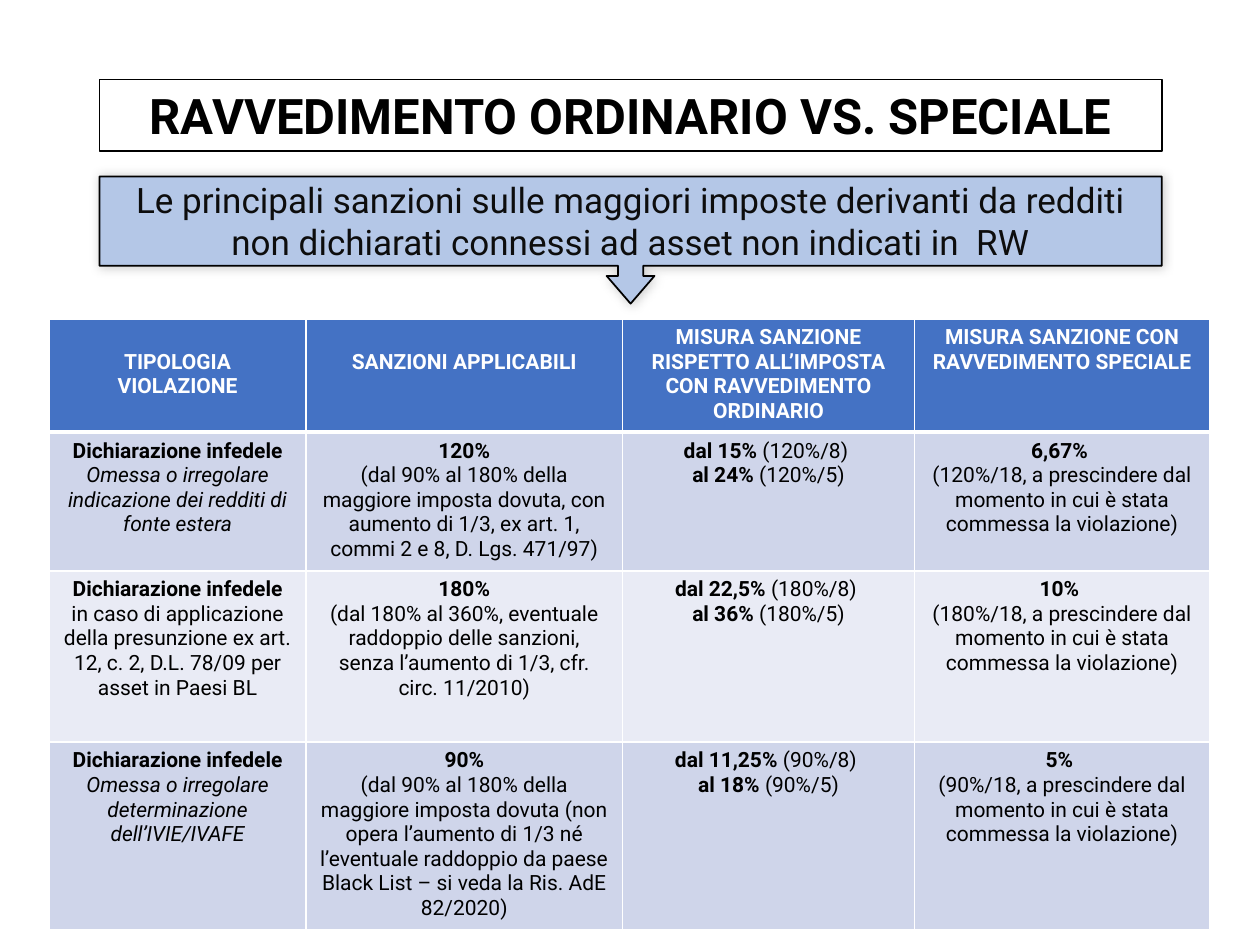
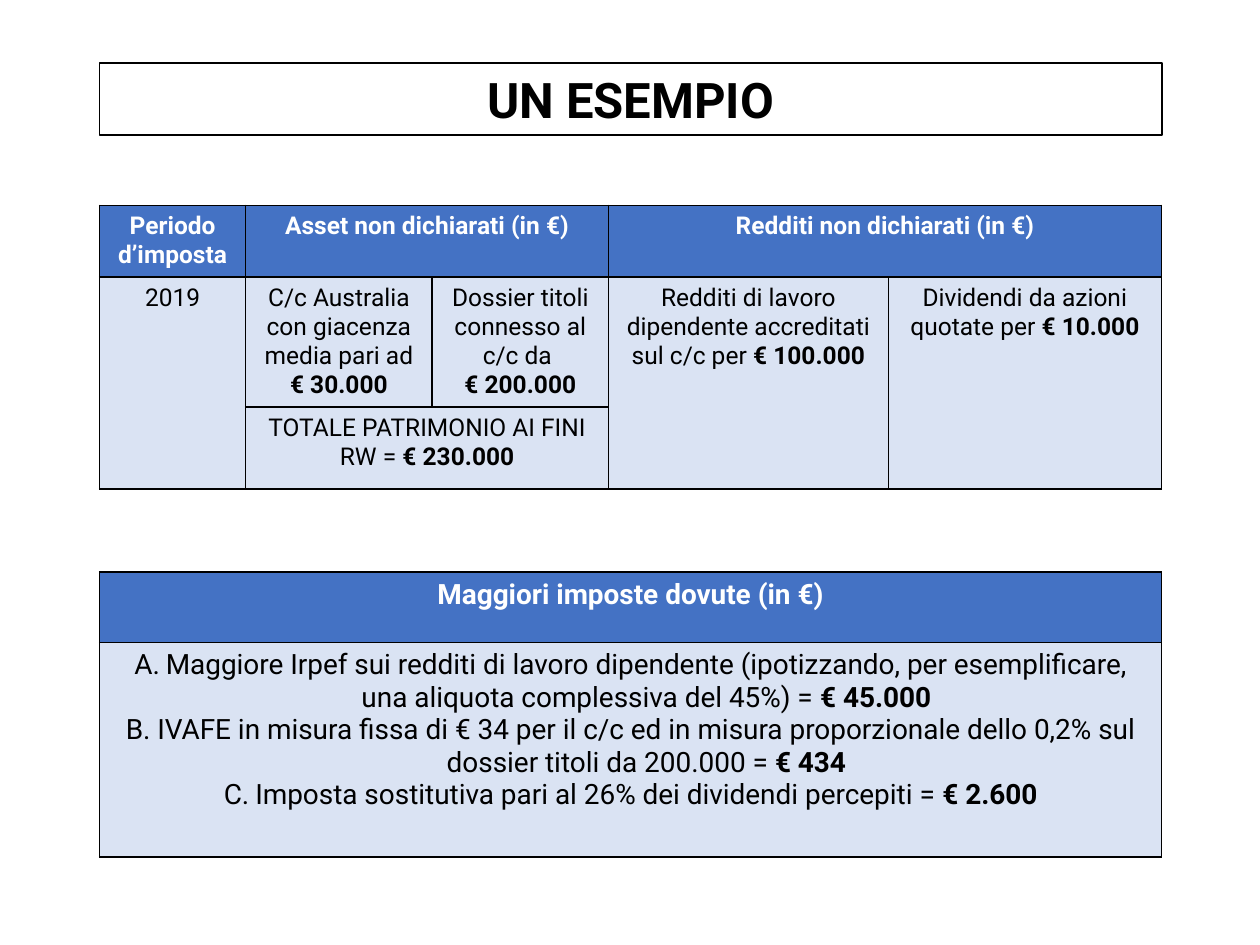
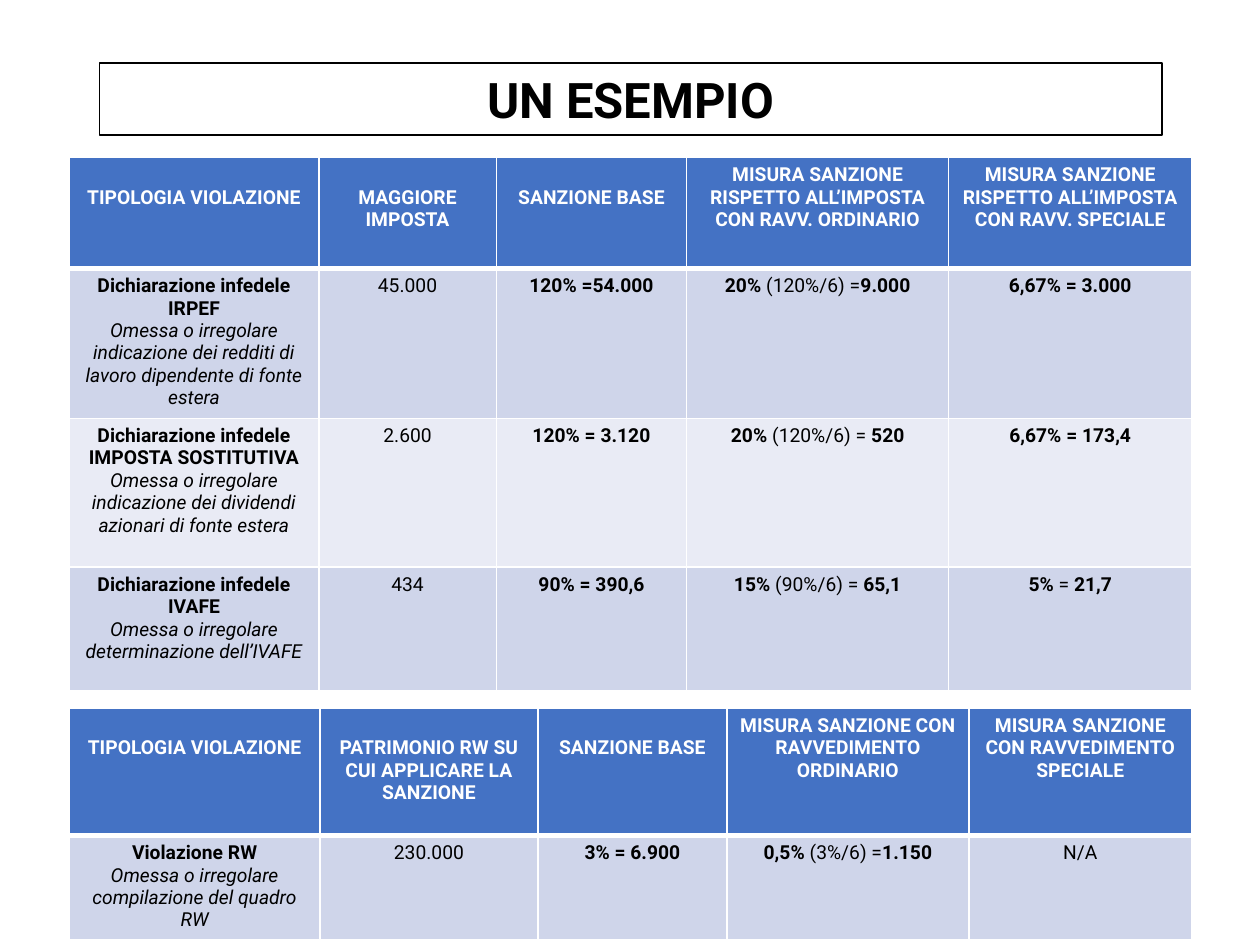
"""Build three slides comparing ordinary and special tax settlement."""
from dataclasses import dataclass

from lxml import etree
from pptx import Presentation
from pptx.dml.color import RGBColor
from pptx.enum.text import MSO_ANCHOR, MSO_AUTO_SIZE, PP_ALIGN
from pptx.oxml.ns import qn
from pptx.util import Inches, Pt

CENTER = PP_ALIGN.CENTER
MIDDLE, TOP = MSO_ANCHOR.MIDDLE, MSO_ANCHOR.TOP
NO_AUTOFIT = MSO_AUTO_SIZE.NONE

FONT = "Roboto"
LINE_HEIGHT = 1.17
TITLE_ONLY = 5
LEFT, WIDTH = 0.79, 8.43
BLACK = RGBColor(0x00, 0x00, 0x00)
WHITE = RGBColor(0xFF, 0xFF, 0xFF)
INK = RGBColor(0x0D, 0x0D, 0x0D)
HEADER_BLUE = RGBColor(0x44, 0x72, 0xC4)
CALLOUT_BLUE = RGBColor(0xB4, 0xC7, 0xE7)
BAND_DARK = RGBColor(0xCF, 0xD5, 0xEA)
BAND_LIGHT = RGBColor(0xE9, 0xEB, 0xF5)
PALE_BLUE = RGBColor(0xDA, 0xE3, 0xF3)


@dataclass(frozen=True)
class Grid:
    """A table: *bold* and _italic markup, one paragraph for each text line."""
    left: float
    top: float
    columns: tuple[float, ...]
    heights: tuple[float, ...]
    size: int
    rows: tuple[tuple[str, ...], ...]
    bands: tuple[RGBColor, ...] = (BAND_DARK, BAND_LIGHT)
    border: RGBColor = WHITE
    header_rule: int = 3
    lowered_headers: int = 0
    merges: tuple[tuple[int, int, int, int], ...] = ()
    lettered: bool = False


SETTLEMENTS = Grid(
    0.39, 2.53, (2.04, 2.51, 2.32, 2.34), (0.9, 1.1, 1.36, 1.49), 12,
    (
        ("*TIPOLOGIA VIOLAZIONE*", "*SANZIONI APPLICABILI*",
         "*MISURA SANZIONE RISPETTO ALL’IMPOSTA CON RAVVEDIMENTO ORDINARIO*",
         "*MISURA SANZIONE CON RAVVEDIMENTO SPECIALE*"),
        ("*Dichiarazione infedele *_Omessa o irregolare indicazione dei redditi di fonte estera",
         "*120%*\n(dal 90% al 180% della maggiore imposta dovuta, con aumento di 1/3, "
         "ex art. 1, commi 2 e 8, D. Lgs. 471/97)",
         "*dal 15% *(120%/8) \n*al 24%* (120%/5)",
         "*6,67% *\n(120%/18, a prescindere dal momento in cui è stata commessa la violazione)"),
        ("*Dichiarazione infedele *in caso di applicazione della presunzione ex art. 12, "
         "c. 2, D.L. 78/09 per asset in Paesi BL",
         "*180%*\n(dal 180% al 360%, eventuale raddoppio delle sanzioni, "
         "senza l’aumento di 1/3, cfr. circ. 11/2010)",
         "*dal 22,5% *(180%/8) \n*al 36%* (180%/5)",
         "*10% *\n(180%/18, a prescindere dal momento in cui è stata commessa la violazione)"),
        ("*Dichiarazione infedele*\n_Omessa o irregolare determinazione dell’IVIE/IVAFE",
         "*90%*\n(dal 90% al 180% della maggiore imposta dovuta (non opera l’aumento di 1/3 né "
         "l’eventuale raddoppio da paese Black List – si veda la Ris. AdE 82/2020)",
         "*dal 11,25% *(90%/8) \n*al 18%* (90%/5)",
         "*5% *\n(90%/18, a prescindere dal momento in cui è stata commessa la violazione)"),
    ),
    lowered_headers=2,
)

UNDECLARED = Grid(
    LEFT, 1.63, (1.16, 1.48, 1.4, 2.22, 2.17), (0.57, 1.03, 0.65), 14,
    (
        ("*Periodo d’imposta*", "*Asset non dichiarati (in €)*", "",
         "*Redditi non dichiarati (in €)*", ""),
        ("2019", "C/c Australia con giacenza media pari ad *€ 30.000*",
         "Dossier titoli connesso al c/c da \n*€ 200.000*",
         "Redditi di lavoro dipendente accreditati sul c/c per *€ 100.000*",
         "Dividendi da azioni quotate per *€ 10.000*"),
        ("", "TOTALE PATRIMONIO AI FINI RW = *€ 230.000*", "", "", ""),
    ),
    bands=(PALE_BLUE,), border=BLACK, header_rule=1,
    merges=((0, 1, 0, 2), (0, 3, 0, 4), (1, 0, 2, 0), (1, 3, 2, 3), (1, 4, 2, 4), (2, 1, 2, 2)),
)

TAXES_DUE = Grid(
    LEFT, 4.54, (WIDTH,), (0.56, 1.7), 16,
    (
        ("*Maggiori imposte dovute (in €)*",),
        ("Maggiore Irpef sui redditi di lavoro dipendente (ipotizzando, per esemplificare, "
         "una aliquota complessiva del 45%) = *€ 45.000*\n"
         "IVAFE in misura fissa di € 34 per il c/c ed in misura proporzionale dello 0,2% "
         "sul dossier titoli da 200.000 = *€ 434*\n"
         "Imposta sostitutiva pari al 26% dei dividendi percepiti = *€ 2.600*",),
    ),
    bands=(PALE_BLUE,), border=BLACK, header_rule=1, lettered=True,
)

TAX_PENALTIES = Grid(
    0.55, 1.25, (1.98, 1.41, 1.51, 2.08, 1.93), (0.88, 1.19, 1.18, 0.98), 11,
    (
        ("*TIPOLOGIA VIOLAZIONE*", "*MAGGIORE IMPOSTA*", "*SANZIONE BASE*",
         "*MISURA SANZIONE RISPETTO ALL’IMPOSTA CON RAVV. ORDINARIO*",
         "*MISURA SANZIONE RISPETTO ALL’IMPOSTA CON RAVV. SPECIALE*"),
        ("*Dichiarazione infedele IRPEF*\n_Omessa o irregolare indicazione dei redditi "
         "di lavoro dipendente di fonte estera",
         "45.000", "*120% =54.000*", "*20% *(120%/6) =*9.000*", "*6,67% = 3.000*"),
        ("*Dichiarazione infedele IMPOSTA SOSTITUTIVA*\n_Omessa o irregolare indicazione "
         "dei dividendi azionari di fonte estera",
         "2.600", "*120% = 3.120*", "*20% *(120%/6) = *520*", "*6,67% = 173,4*"),
        ("*Dichiarazione infedele IVAFE*\n_Omessa o irregolare determinazione dell’IVAFE",
         "434", "*90% = 390,6*", "*15% *(90%/6) = *65,1*", "*5%* = *21,7*"),
    ),
    lowered_headers=3,
)

RW_PENALTIES = Grid(
    0.55, 5.62, (1.99, 1.73, 1.5, 1.92, 1.77), (1.01, 0.83), 11,
    (
        ("*TIPOLOGIA VIOLAZIONE*", "*PATRIMONIO RW SU CUI APPLICARE LA SANZIONE*",
         "*SANZIONE BASE*", "*MISURA SANZIONE CON RAVVEDIMENTO ORDINARIO*",
         "*MISURA SANZIONE CON RAVVEDIMENTO SPECIALE*"),
        ("*Violazione RW*\n_Omessa o irregolare compilazione del quadro RW",
         "230.000", "*3% = 6.900*", "*0,5% *(3%/6) =*1.150*", "N/A"),
    ),
    lowered_headers=3,
)


def write(frame, text: str, size: int, color: RGBColor, lettered: bool = False) -> None:
    """Fill a text frame with centred paragraphs of marked-up text."""
    for number, line in enumerate(text.split("\n")):
        para = frame.add_paragraph() if number else frame.paragraphs[0]
        para.alignment = CENTER
        if lettered:
            properties = para._p.get_or_add_pPr()
            properties.set("marL", str(Inches(0.25)))
            properties.set("indent", str(Inches(-0.25)))
            etree.SubElement(properties, qn("a:buAutoNum"), type="alphaUcPeriod")
        for index, piece in enumerate(line.split("*")):
            if piece:
                span = para.add_run()
                span.text = piece.removeprefix("_")
                span.font.name = FONT
                span.font.size = Pt(size)
                span.font.bold = index % 2 == 1
                span.font.italic = piece.startswith("_")
                span.font.color.rgb = color


def set_box(box, fill: RGBColor, anchor, top_inset: float = 0.05) -> None:
    """Give a box its fill, thin black outline and text insets."""
    box.fill.solid()
    box.fill.fore_color.rgb = fill
    box.line.color.rgb = BLACK
    box.line.width = Pt(1)
    frame = box.text_frame
    frame.word_wrap = True
    frame.auto_size = NO_AUTOFIT
    frame.vertical_anchor = anchor
    frame.margin_left = frame.margin_right = frame.margin_bottom = Inches(0.05)
    frame.margin_top = Inches(top_inset)


def add_page(deck, title: str, top: float):
    """Add a slide with the framed title."""
    page = deck.slides.add_slide(deck.slide_layouts[TITLE_ONLY])
    box = page.shapes.title
    box.left, box.top = Inches(LEFT), Inches(top)
    box.width, box.height = Inches(WIDTH), Inches(0.57)
    set_box(box, WHITE, MIDDLE)
    write(box.text_frame, f"*{title}*", 28, BLACK)
    return page


def add_callout(page, text: str) -> None:
    """Draw the wide banner with an arrow pointing down to the table."""
    right, middle, top, base = LEFT + WIDTH, LEFT + WIDTH / 2, 1.4, 2.11
    neck, tip = 2.19, 2.41
    points = [(LEFT, top), (right, top), (right, base), (middle + 0.1, base),
              (middle + 0.1, neck), (middle + 0.19, neck), (middle, tip),
              (middle - 0.19, neck), (middle - 0.1, neck), (middle - 0.1, base), (LEFT, base)]
    corners = [(Inches(x), Inches(y)) for x, y in points]
    builder = page.shapes.build_freeform(*corners[0])
    builder.add_line_segments(corners[1:], close=True)
    box = builder.convert_to_shape()
    set_box(box, CALLOUT_BLUE, TOP, 0.02)
    box.shadow.inherit = False
    effects = box._element.spPr.find(qn("a:effectLst"))
    shadow = etree.SubElement(effects, qn("a:outerShdw"), blurRad=str(Pt(6)), dist="0",
                              dir=str(225 * 60000))
    shade = etree.SubElement(shadow, qn("a:srgbClr"), val=str(BLACK))
    etree.SubElement(shade, qn("a:alpha"), val="20000")
    write(box.text_frame, text, 20, INK)


def set_borders(cell, color: RGBColor, top: int, bottom: int) -> None:
    """Draw the four borders of a cell."""
    properties = cell._tc.get_or_add_tcPr()
    for side, points in (("L", 1), ("R", 1), ("T", top), ("B", bottom)):
        line = etree.SubElement(properties, qn(f"a:ln{side}"), w=str(Pt(points)))
        fill = etree.SubElement(line, qn("a:solidFill"))
        etree.SubElement(fill, qn("a:srgbClr"), val=str(color))


def add_grid(page, grid: Grid) -> None:
    """Draw a table with a blue header row and banded body rows."""
    table = page.shapes.add_table(
        len(grid.heights), len(grid.columns), Inches(grid.left), Inches(grid.top),
        Inches(sum(grid.columns)), Inches(sum(grid.heights))).table
    table.horz_banding = False
    for column, width in zip(table.columns, grid.columns):
        column.width = Inches(width)
    for row, height in zip(table.rows, grid.heights):
        row.height = Inches(height)
    for row_index, texts in enumerate(grid.rows):
        header = row_index == 0
        for column_index, text in enumerate(texts):
            cell = table.cell(row_index, column_index)
            set_borders(cell, grid.border, grid.header_rule if row_index == 1 else 1,
                        grid.header_rule if header else 1)
            cell.fill.solid()
            cell.fill.fore_color.rgb = (
                HEADER_BLUE if header else grid.bands[(row_index - 1) % len(grid.bands)])
            if header and column_index < grid.lowered_headers:
                cell.margin_top = Inches(0.05) + Pt(grid.size * LINE_HEIGHT)
            write(cell.text_frame, text, grid.size, WHITE if header else BLACK,
                  grid.lettered and not header)
    for first_row, first_column, last_row, last_column in grid.merges:
        table.cell(first_row, first_column).merge(table.cell(last_row, last_column))


def main() -> None:
    """Build and save the deck."""
    deck = Presentation()
    deck.slide_width, deck.slide_height = Inches(10), Inches(7.5)
    page = add_page(deck, "RAVVEDIMENTO ORDINARIO VS. SPECIALE", 0.63)
    add_callout(page, "Le principali sanzioni sulle maggiori imposte derivanti da redditi "
                      "non dichiarati connessi ad asset non indicati in  RW")
    add_grid(page, SETTLEMENTS)
    for grids in ((UNDECLARED, TAXES_DUE), (TAX_PENALTIES, RW_PENALTIES)):
        page = add_page(deck, "UN ESEMPIO", 0.5)
        for grid in grids:
            add_grid(page, grid)
    deck.save("out.pptx")


if __name__ == "__main__":
    main()
